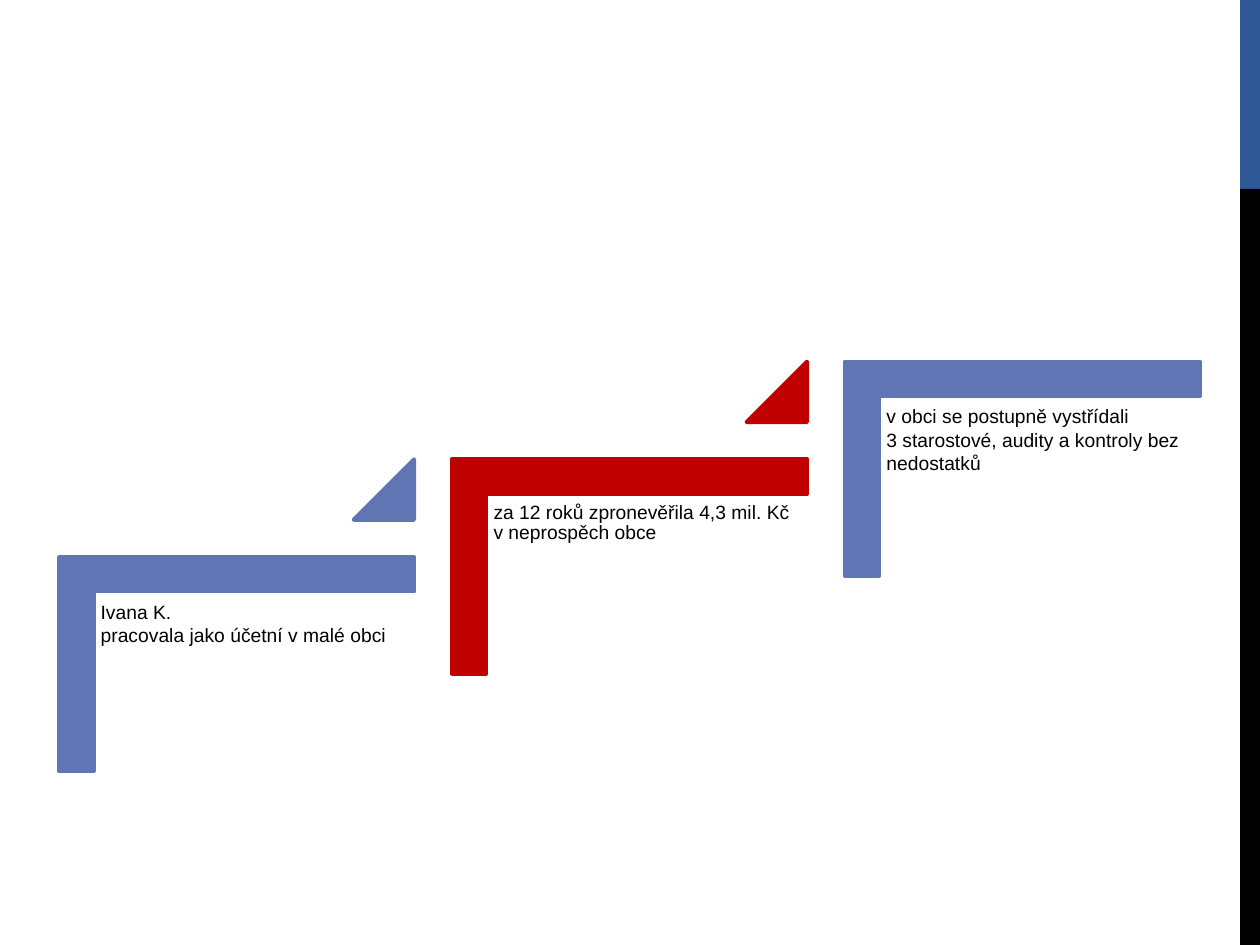
from dataclasses import dataclass

from pptx import Presentation
from pptx.dml.color import RGBColor
from pptx.enum.shapes import MSO_SHAPE
from pptx.enum.text import MSO_ANCHOR, PP_ALIGN
from pptx.util import Cm, Pt

RECTANGLE = MSO_SHAPE.RECTANGLE
CORNER = MSO_SHAPE.CORNER
TRIANGLE = MSO_SHAPE.ISOSCELES_TRIANGLE
TOP = MSO_ANCHOR.TOP
LEFT = PP_ALIGN.LEFT


@dataclass(frozen=True)
class Theme:
    sidebar: str = "2F5897"
    step: str = "6076B4"
    accent: str = "C00000"
    ink: str = "000000"
    font: str = "Arial"
    body_size: int = 11
    outline: float = 2.25


THEME = Theme()
SLIDE_WIDTH, SLIDE_HEIGHT = 25.4, 19.05
STEP_WIDTH, STEP_HEIGHT = 7.16, 4.32
STEP_RUN, STEP_RISE = 7.92, 1.97
STEPS = [
    (["Ivana K.", "pracovala jako účetní v malé obci"], THEME.step, {}),
    (
        ["za 12 roků zpronevěřila 4,3 mil. Kč v neprospěch obce"],
        THEME.accent,
        {"line_spacing": 0.9, "space_after": 4},
    ),
    (
        ["v obci se postupně vystřídali", "3 starostové, audity a kontroly bez nedostatků"],
        THEME.step,
        {},
    ),
]


def add_block(slide, preset, left, top, width, height, color, outline=0, adjustments=()):
    block = slide.shapes.add_shape(preset, Cm(left), Cm(top), Cm(width), Cm(height))
    block.shadow.inherit = False
    block.fill.solid()
    block.fill.fore_color.rgb = RGBColor.from_string(color)
    if outline:
        block.line.color.rgb = RGBColor.from_string(color)
        block.line.width = Pt(outline)
    else:
        block.line.fill.background()
    for index, value in enumerate(adjustments):
        block.adjustments[index] = value
    return block


def add_text(slide, lines, left, top, width, height, *, size=THEME.body_size,
             color=THEME.ink, inset=0.13, line_spacing=None, space_after=None):
    caption = slide.shapes.add_textbox(Cm(left), Cm(top), Cm(width), Cm(height))
    frame = caption.text_frame
    frame.word_wrap = True
    frame.vertical_anchor = TOP
    frame.margin_left = frame.margin_right = Cm(inset)
    frame.margin_top = frame.margin_bottom = Cm(inset)
    frame.text = "\n".join(lines)
    for paragraph in frame.paragraphs:
        paragraph.alignment = LEFT
        if line_spacing is not None:
            paragraph.line_spacing = line_spacing
        if space_after is not None:
            paragraph.space_after = Pt(space_after)
        for run in paragraph.runs:
            run.font.name = THEME.font
            run.font.size = Pt(size)
            run.font.color.rgb = RGBColor.from_string(color)


def add_sidebar(slide, left, top, width, height):
    upper = height / 5
    add_block(slide, RECTANGLE, left, top, width, upper, THEME.sidebar)
    add_block(slide, RECTANGLE, left, top + upper, width, height - upper, THEME.ink)


def add_step(slide, left, top, width, height, lines, color, text_format, has_next):
    turn = (width - height) / 2
    elbow = add_block(slide, CORNER, left + turn, top - turn, height, width, color,
                      THEME.outline, (0.161, 0.161))
    elbow.rotation = 90
    add_text(slide, lines, left + 0.71, top + 0.74, width - 0.68, height + 1.34, **text_format)
    if has_next:
        marker = 1.22
        add_block(slide, TRIANGLE, left + width - marker, top - STEP_RISE, marker, marker,
                  color, THEME.outline, (1,))


def add_staircase(slide, left, top):
    for index, (lines, color, text_format) in enumerate(STEPS):
        add_step(slide, left + index * STEP_RUN, top - index * STEP_RISE,
                 STEP_WIDTH, STEP_HEIGHT, lines, color, text_format,
                 has_next=index < len(STEPS) - 1)


def main():
    presentation = Presentation()
    presentation.slide_width = Cm(SLIDE_WIDTH)
    presentation.slide_height = Cm(SLIDE_HEIGHT)
    slide = presentation.slides.add_slide(presentation.slide_layouts[6])
    sidebar_width = 0.4
    add_sidebar(slide, SLIDE_WIDTH - sidebar_width, 0, sidebar_width, SLIDE_HEIGHT)
    add_staircase(slide, 1.19, 11.23)
    presentation.save("out.pptx")


if __name__ == "__main__":
    main()
